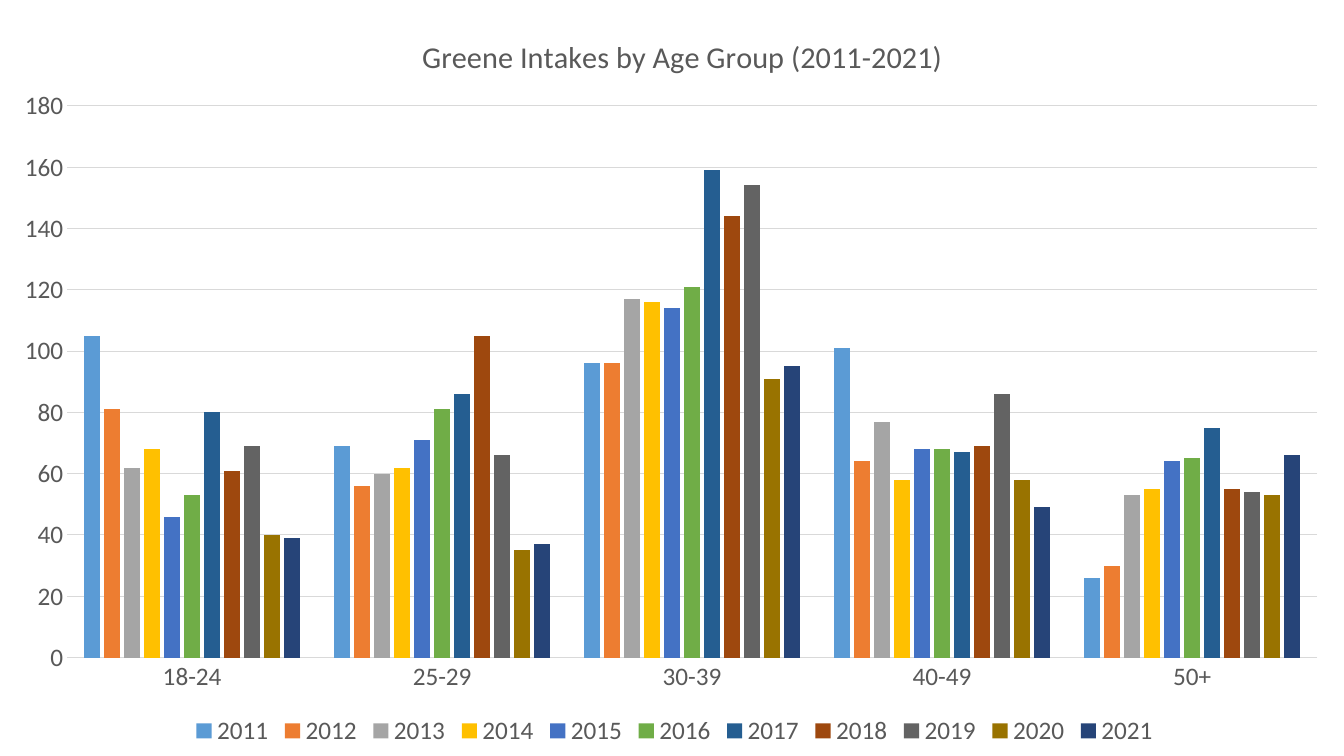
from lxml import etree
from pptx import Presentation
from pptx.chart.data import CategoryChartData
from pptx.dml.color import RGBColor
from pptx.enum.chart import XL_CHART_TYPE, XL_LEGEND_POSITION, XL_TICK_MARK
from pptx.oxml.ns import qn
from pptx.util import Inches, Pt

COLUMN = XL_CHART_TYPE.COLUMN_CLUSTERED
BOTTOM = XL_LEGEND_POSITION.BOTTOM
NO_TICK = XL_TICK_MARK.NONE
WIDTH, HEIGHT = Inches(13.33), Inches(7.5)

TITLE = "Greene Intakes by Age Group (2011-2021)"
AGES = ["18-24", "25-29", "30-39", "40-49", "50+"]
INTAKES = {
    "2011": [105, 69, 96, 101, 26],
    "2012": [81, 56, 96, 64, 30],
    "2013": [62, 60, 117, 77, 53],
    "2014": [68, 62, 116, 58, 55],
    "2015": [46, 71, 114, 68, 64],
    "2016": [53, 81, 121, 68, 65],
    "2017": [80, 86, 159, 67, 75],
    "2018": [61, 105, 144, 69, 55],
    "2019": [69, 66, 154, 86, 54],
    "2020": [40, 35, 91, 58, 53],
    "2021": [39, 37, 95, 49, 66],
}


class Theme:
    """Fonts, type sizes and colours of the slide."""
    font = "Calibri"
    title = 21.6
    body = 18
    text = "595959"
    grid = "D9D9D9"
    paper = "FFFFFF"
    bars = ["5B9BD5", "ED7D31", "A5A5A5", "FFC000", "4472C4", "70AD47",
            "255E91", "9E480E", "636363", "997300", "264478"]


class Deck:
    """Draws styled elements on the current slide."""

    def __init__(self, theme, slide):
        """Keep the style and the slide, and paint the background."""
        self.theme, self.slide = theme, slide
        fill = slide.background.fill
        fill.solid()
        fill.fore_color.rgb = RGBColor.from_string(theme.paper)

    def type(self, font, size):
        """Style one font."""
        font.name, font.size, font.bold = self.theme.font, Pt(size), False
        font.color.rgb = RGBColor.from_string(self.theme.text)

    def rule(self, line):
        """Style an axis or grid line."""
        line.width = Pt(0.75)
        line.color.rgb = RGBColor.from_string(self.theme.grid)

    def place(self, chart, tag, spot, **sizes):
        """Set the place of a chart part as fractions of the chart."""
        part = chart.element.find(".//" + qn(tag))
        for old in part.findall(qn("c:layout")):
            part.remove(old)
        layout = etree.Element(qn("c:layout"))
        part.insert(spot, layout)
        manual = etree.SubElement(layout, qn("c:manualLayout"))
        if "w" in sizes:
            etree.SubElement(manual, qn("c:layoutTarget")).set("val", "inner")
        for key in ("xMode", "yMode"):
            etree.SubElement(manual, qn("c:" + key)).set("val", "edge")
        for key, size in sizes.items():
            etree.SubElement(manual, qn("c:" + key)).set("val", str(size))

    def axes(self, chart):
        """Style both axes and the grid."""
        for axis in (chart.category_axis, chart.value_axis):
            axis.major_tick_mark = axis.minor_tick_mark = NO_TICK
            self.type(axis.tick_labels.font, self.theme.body)
        self.rule(chart.category_axis.format.line)
        scale = chart.value_axis
        scale.minimum_scale, scale.maximum_scale, scale.major_unit = 0, 180, 20
        scale.format.line.fill.background()
        scale.has_major_gridlines = True
        self.rule(scale.major_gridlines.format.line)

    def columns(self, title, groups, table):
        """Add a full-slide clustered column chart."""
        data = CategoryChartData()
        data.categories = groups
        for name, values in table.items():
            data.add_series(name, values)
        chart = self.slide.shapes.add_chart(
            COLUMN, Inches(0), Inches(0), WIDTH, HEIGHT, data).chart
        self.type(chart.font, self.theme.body)
        chart.has_title = True
        frame = chart.chart_title.text_frame
        frame.text = title
        self.type(frame.paragraphs[0].runs[0].font, self.theme.title)
        chart.has_legend = True
        chart.legend.position = BOTTOM
        chart.legend.include_in_layout = False
        self.type(chart.legend.font, self.theme.body)
        self.axes(chart)
        plot = chart.plots[0]
        plot.gap_width, plot.overlap, plot.vary_by_categories = 219, -27, False
        for series, color in zip(plot.series, self.theme.bars):
            series.format.fill.solid()
            series.format.fill.fore_color.rgb = RGBColor.from_string(color)
        self.place(chart, "c:title", 1, x=0.31, y=0.04)
        self.place(chart, "c:plotArea", 0, x=0.05, y=0.14, w=0.93, h=0.73)
        self.place(chart, "c:legend", 1, x=0.14, y=0.94)


def main():
    """Build and save the slide."""
    show = Presentation()
    show.slide_width, show.slide_height = WIDTH, HEIGHT
    deck = Deck(Theme, show.slides.add_slide(show.slide_layouts[6]))
    deck.columns(TITLE, AGES, INTAKES)
    show.save("out.pptx")


if __name__ == "__main__":
    main()
